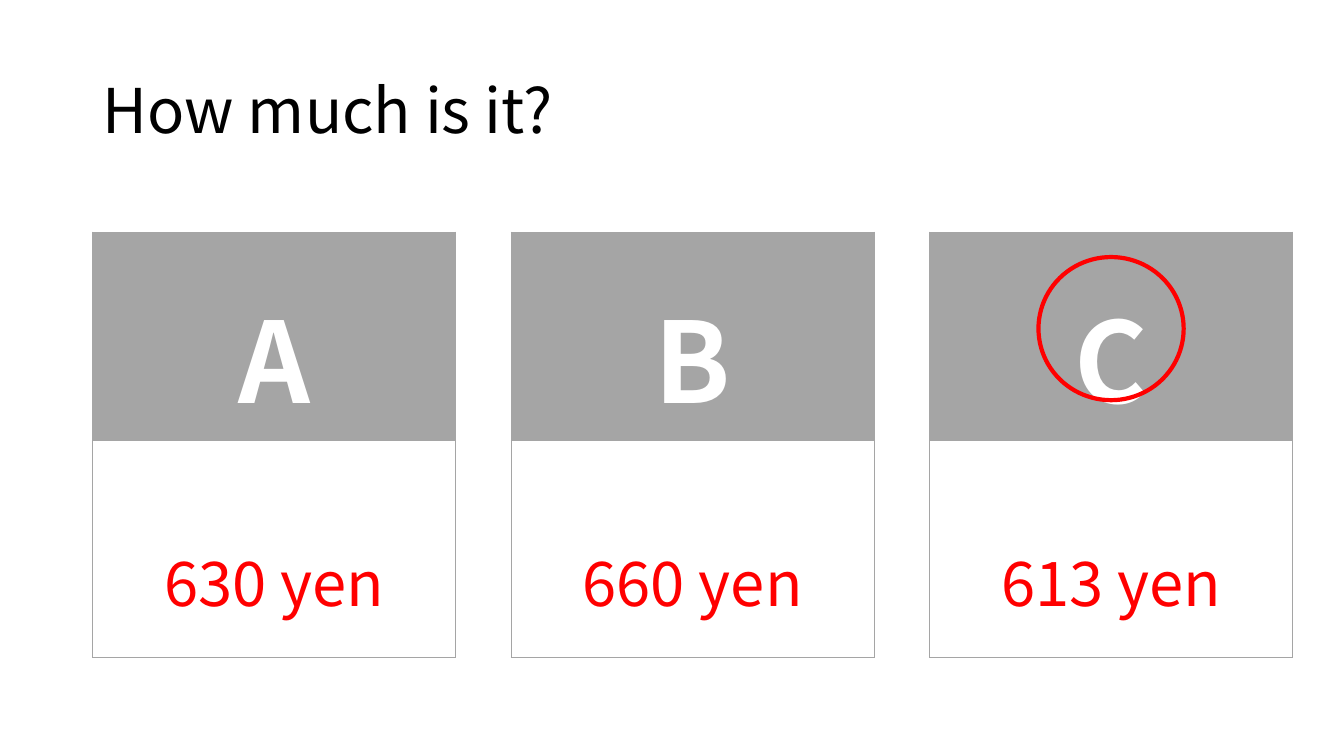
import pptx
import pptx.dml.color
import pptx.enum.shapes
import pptx.enum.text
import pptx.oxml
import pptx.oxml.ns
import pptx.util
from pptx.util import Inches

COLORS = {"black": "000000", "white": "FFFFFF", "gray": "A5A5A5", "red": "FF0000"}
FONT = "Noto Sans CJK JP"


def rgb(name):
    return pptx.dml.color.RGBColor.from_string(COLORS[name])


def write(frame, text, size=44, color="black", bold=False, align="CENTER", spacing=1.0):
    paragraph = frame.paragraphs[0]
    paragraph.alignment = getattr(pptx.enum.text.PP_ALIGN, align)
    paragraph.line_spacing = spacing
    run = paragraph.add_run()
    run.text = text
    run.font.name = FONT
    run.font.size = pptx.util.Pt(size)
    run.font.bold = bold
    run.font.color.rgb = rgb(color)


deck = pptx.Presentation()
deck.slide_width, deck.slide_height = Inches(13.33), Inches(7.5)
slide = deck.slides.add_slide(deck.slide_layouts[5])

question = slide.shapes.title
question.left, question.top = Inches(0.92), Inches(0.4)
question.width, question.height = Inches(11.5), Inches(1.45)
question.text_frame.auto_size = pptx.enum.text.MSO_AUTO_SIZE.NONE
question.text_frame.vertical_anchor = pptx.enum.text.MSO_ANCHOR.MIDDLE
write(question.text_frame, "How much is it?", align="LEFT", spacing=0.9)

for position, (letter, price) in enumerate([("A", "630 yen"), ("B", "660 yen"), ("C", "613 yen")]):
    card = slide.shapes.add_table(
        2, 1, Inches(0.92 + 4.15 * position), Inches(2.3), Inches(3.6), Inches(4.01)
    ).table
    card.rows[0].height, card.rows[1].height = Inches(1.86), Inches(2.15)
    choice, answer = card.cell(0, 0), card.cell(1, 0)
    choice.margin_top, answer.margin_top = Inches(0.41), Inches(0.94)
    write(choice.text_frame, letter, size=80, color="white", bold=True)
    write(answer.text_frame, price, color="red")
    for cell, fill in [(choice, "gray"), (answer, "white")]:
        properties = cell._tc.get_or_add_tcPr()
        for side in ("lnL", "lnR", "lnT", "lnB"):
            properties.append(pptx.oxml.parse_xml(
                f'<a:{side} {pptx.oxml.ns.nsdecls("a")} w="6350"><a:solidFill>'
                f'<a:srgbClr val="{COLORS["gray"]}"/></a:solidFill></a:{side}>'
            ))
        cell.fill.solid()
        cell.fill.fore_color.rgb = rgb(fill)

correct_mark = slide.shapes.add_shape(
    pptx.enum.shapes.MSO_SHAPE.OVAL, Inches(10.3), Inches(2.55), Inches(1.44), Inches(1.42)
)
correct_mark.shadow.inherit = False
correct_mark.fill.background()
correct_mark.line.color.rgb = rgb("red")
correct_mark.line.width = pptx.util.Pt(3)

deck.save("out.pptx")
